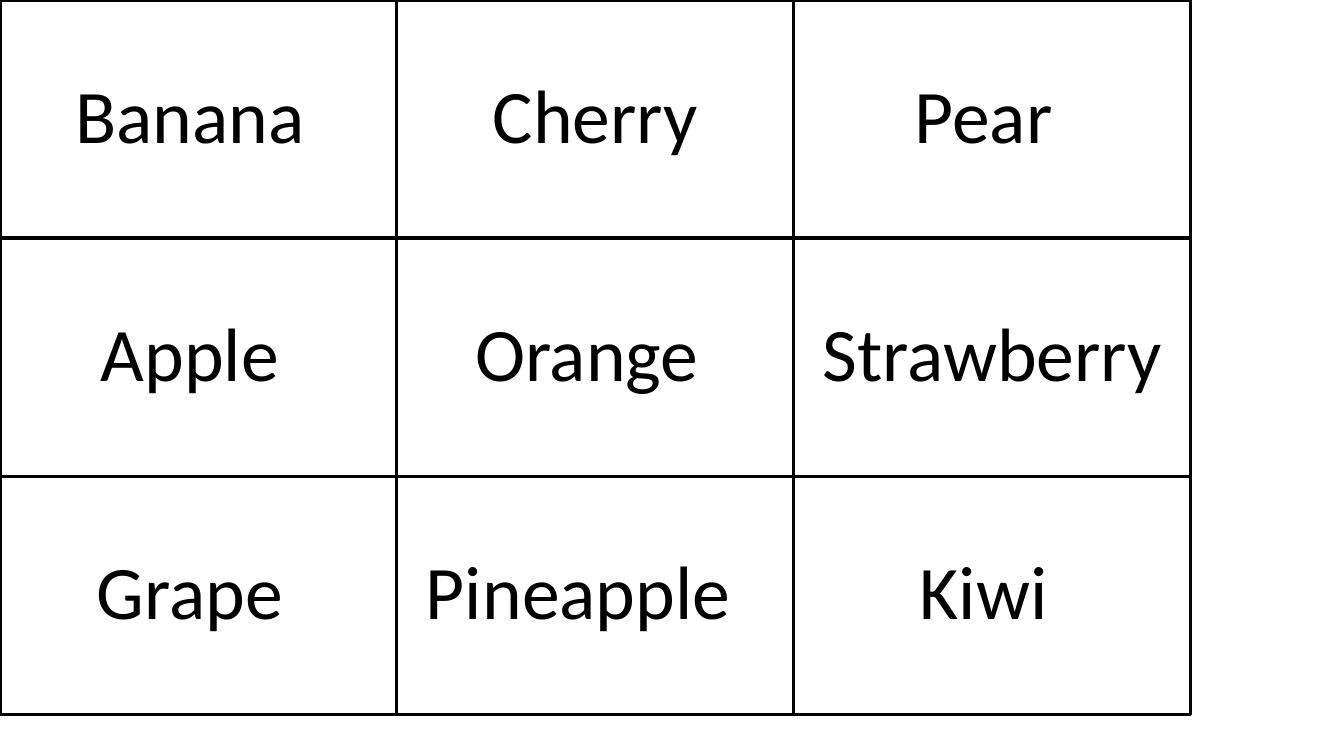
from dataclasses import dataclass

from pptx import Presentation
from pptx.dml.color import RGBColor
from pptx.enum.shapes import MSO_SHAPE
from pptx.enum.text import MSO_ANCHOR, PP_ALIGN
from pptx.util import Cm, Inches, Pt

RECT = MSO_SHAPE.RECTANGLE
MIDDLE = MSO_ANCHOR.MIDDLE
CENTER = PP_ALIGN.CENTER

COLORS = {"card": "FFFFFF", "ink": "000000"}
COL_W, ROW_H = Cm(10), Cm(6)
INSET = Inches(0.1)
NUDGE = Inches(0.17)


@dataclass(frozen=True)
class Card:
    name: str
    col: int
    row: int
    nudges: int = 1


CARDS = [
    Card("Banana", 0, 0),
    Card("Apple", 0, 1),
    Card("Grape", 0, 2),
    Card("Cherry", 1, 0, nudges=0),
    Card("Orange", 1, 1),
    Card("Pineapple", 1, 2, nudges=2),
    Card("Pear", 2, 0),
    Card("Strawberry", 2, 1, nudges=0),
    Card("Kiwi", 2, 2),
]


def color(key: str) -> RGBColor:
    return RGBColor.from_string(COLORS[key])


def write(tf, text: str, *, size: int = 54, font: str = "Calibri",
          ink: str = "ink", spacing: float = 0.9) -> None:
    tf.word_wrap = True
    tf.vertical_anchor = MIDDLE
    p = tf.paragraphs[0]
    p.alignment = CENTER
    p.line_spacing = spacing
    r = p.add_run()
    r.text = text
    r.font.size = Pt(size)
    r.font.name = font
    r.font.color.rgb = color(ink)


def draw_card(s, card: Card) -> None:
    sp = s.shapes.add_shape(RECT, card.col * COL_W, card.row * ROW_H, COL_W, ROW_H)
    sp.shadow.inherit = False
    sp.fill.solid()
    sp.fill.fore_color.rgb = color("card")
    sp.line.color.rgb = color("ink")
    sp.line.width = Pt(2.25)
    tf = sp.text_frame
    tf.margin_left = INSET
    tf.margin_right = INSET + card.nudges * NUDGE
    write(tf, card.name)


def main() -> None:
    prs = Presentation()
    prs.slide_width, prs.slide_height = Inches(13.33), Inches(7.5)
    s = prs.slides.add_slide(prs.slide_layouts[6])
    for card in CARDS:
        draw_card(s, card)
    prs.save("out.pptx")


if __name__ == "__main__":
    main()
